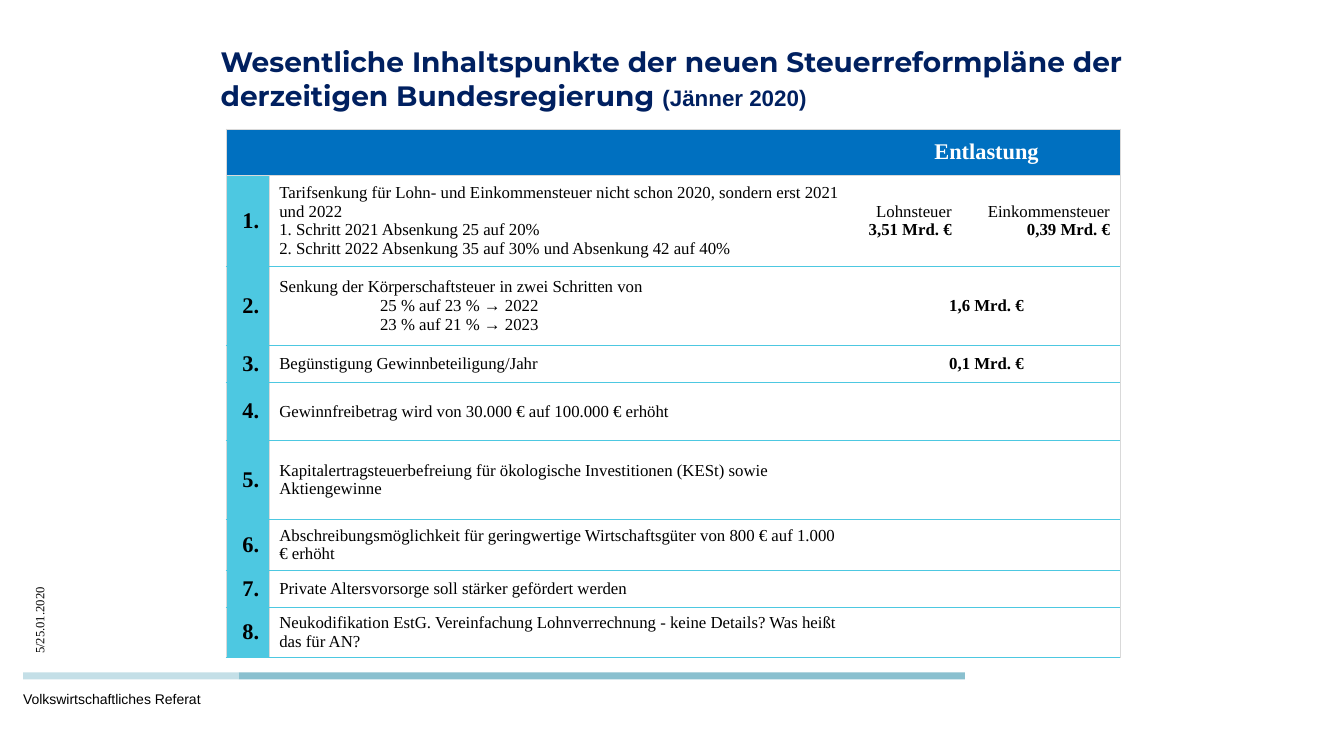
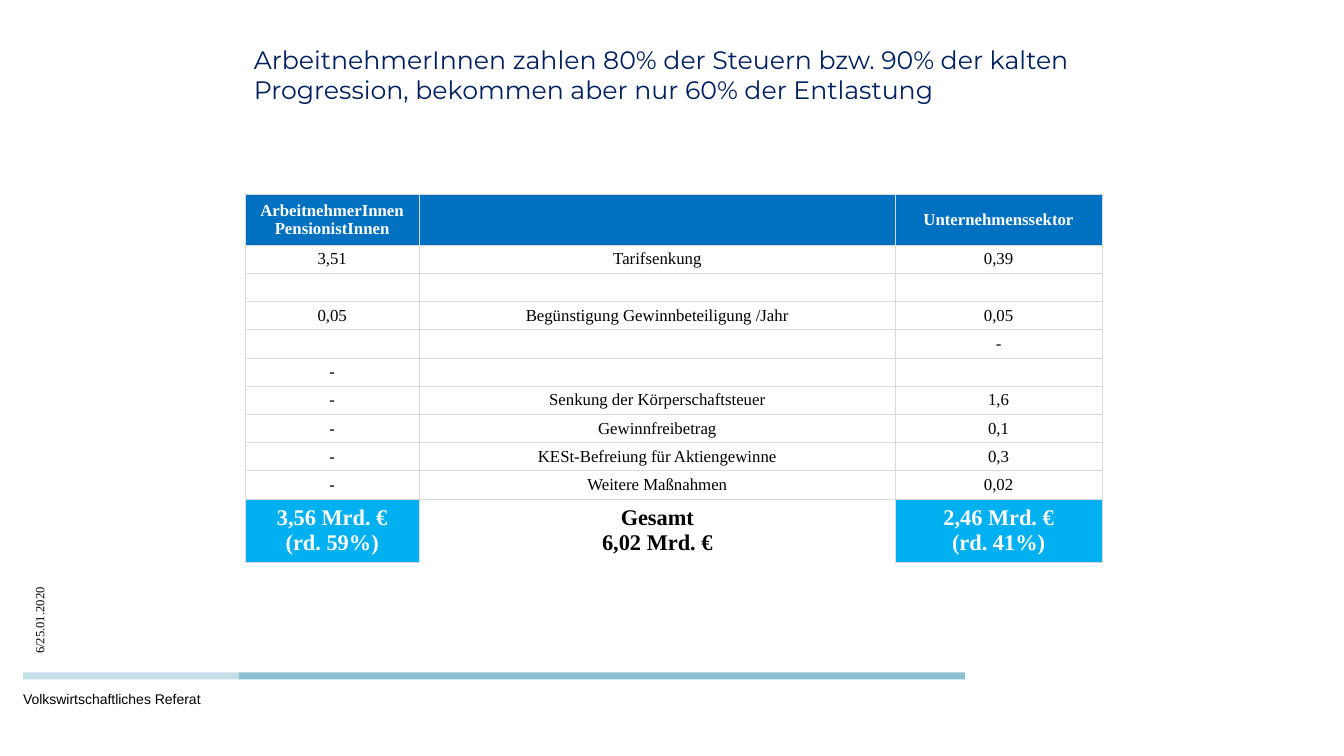
"""Builds two slides on the tax reform plans: contents and relief by group."""
from lxml import etree
from pptx import Presentation, util as u
from pptx.dml.color import RGBColor
from pptx.enum import shapes, text
from pptx.oxml import ns

NAVY, BLUE, TEAL, SKY = "002060", "0070C0", "4DC8E1", "00B0F0"
GREY, BAR, PALE, BLACK, WHITE = "D9D9D9", "8AC0CF", "C4DFE7", "000000", "FFFFFF"
SERIF = "Times New Roman"
LEFT, MID, RIGHT = text.PP_ALIGN.LEFT, text.PP_ALIGN.CENTER, text.PP_ALIGN.RIGHT


def style(size, color=BLACK, bold=False, name=SERIF):
    return dict(size=u.Pt(size), bold=bold, name=name), color


BODY, BOLD, NUM = style(12), style(12, bold=True), style(16, bold=True)
HEAD, CAP, SUM = style(16, WHITE, True), style(12, WHITE, True), style(16, WHITE, True)
FOOT, DATE = style(10, name="Arial"), style(9)
TITLE = style(20, NAVY, True, "Montserrat")
NOTE = style(16, NAVY, True, "Arial")
PLAIN = style(18, NAVY, False, "Montserrat")

PLANS = [
    (0.83, ["Tarifsenkung für Lohn- und Einkommensteuer nicht schon 2020, sondern erst 2021 und 2022",
            "1. Schritt 2021 Absenkung 25 auf 20%",
            "2. Schritt 2022 Absenkung 35 auf 30% und Absenkung 42 auf 40%"], 0,
     [["Lohnsteuer", "3,51 Mrd. €"], ["Einkommensteuer", "0,39 Mrd. €"]]),
    (0.79, ["Senkung der Körperschaftsteuer in zwei Schritten von",
            "25 % auf 23 % → 2022", "23 % auf 21 % → 2023"], 1, [["1,6 Mrd. €"]]),
    (0.35, ["Begünstigung Gewinnbeteiligung/Jahr"], 0, [["0,1 Mrd. €"]]),
    (0.57, ["Gewinnfreibetrag wird von 30.000 € auf 100.000 € erhöht"], 0, [[]]),
    (0.79, ["Kapitalertragsteuerbefreiung für ökologische Investitionen (KESt) sowie Aktiengewinne"], 0, [[]]),
    (0.46, ["Abschreibungsmöglichkeit für geringwertige Wirtschaftsgüter von 800 € auf 1.000 € erhöht"], 0, [[]]),
    (0.35, ["Private Altersvorsorge soll stärker gefördert werden"], 0, [[]]),
    (0.46, ["Neukodifikation EstG. Vereinfachung Lohnverrechnung - keine Details? Was heißt das für AN?"], 0, [[]]),
]
SHARES = [
    (["ArbeitnehmerInnen", "PensionistInnen"], [], ["Unternehmenssektor"]),
    (["3,51"], ["Tarifsenkung"], ["0,39"]),
    ([], [], []),
    (["0,05"], ["Begünstigung Gewinnbeteiligung /Jahr"], ["0,05"]),
    ([], [], ["-"]),
    (["-"], [], []),
    (["-"], ["Senkung der Körperschaftsteuer"], ["1,6"]),
    (["-"], ["Gewinnfreibetrag"], ["0,1"]),
    (["-"], ["KESt-Befreiung für Aktiengewinne"], ["0,3"]),
    (["-"], ["Weitere Maßnahmen"], ["0,02"]),
    (["3,56 Mrd. €", "(rd. 59%)"], ["Gesamt", "6,02 Mrd. €"], ["2,46 Mrd. €", "(rd. 41%)"]),
]


def rgb(code):
    return RGBColor.from_string(code)


def write(frame, paras, align=LEFT, indent=0):
    for i, runs in enumerate(paras):
        para = frame.paragraphs[0] if i == 0 else frame.add_paragraph()
        para.alignment = align
        if i and indent:
            para._p.get_or_add_pPr().set("marL", str(u.Inches(indent)))
        for words, (form, color) in runs:
            run = para.add_run()
            run.text = words
            for key, val in form.items():
                setattr(run.font, key, val)
            run.font.color.rgb = rgb(color)


def label(slide, box, runs, anchor=text.MSO_ANCHOR.TOP, turn=0):
    shape = slide.shapes.add_textbox(*map(u.Inches, box))
    shape.rotation = turn
    shape.text_frame.word_wrap = True
    shape.text_frame.vertical_anchor = anchor
    write(shape.text_frame, [runs])


def frame(deck, page, box, title):
    slide = deck.slides.add_slide(deck.slide_layouts[6])
    label(slide, (0.13, 6.8, 3.78, 0.26), [("Volkswirtschaftliches Referat", FOOT)])
    label(slide, (-0.28, 5.79, 1.34, 0.25), [(f"{page}/25.01.2020", DATE)], turn=270)
    for left, width, color in ((2.37, 7.2, BAR), (0.23, 2.14, PALE)):
        bar = slide.shapes.add_shape(shapes.MSO_SHAPE.RECTANGLE,
                                     *map(u.Inches, (left, 6.67, width, 0.07)))
        bar.shadow.inherit = False
        bar.fill.solid()
        bar.fill.fore_color.rgb = rgb(color)
        bar.line.fill.background()
    label(slide, box, title, text.MSO_ANCHOR.MIDDLE)
    return slide


def grid(slide, left, top, cols, rows):
    box = map(u.Inches, (left, top, sum(cols), sum(rows)))
    table = slide.shapes.add_table(len(rows), len(cols), *box).table
    table.first_row = table.horz_banding = False
    for parts, sizes, key in ((table.columns, cols, "width"), (table.rows, rows, "height")):
        for part, size in zip(parts, sizes):
            setattr(part, key, u.Inches(size))
    return table


def paint(cell, fill, edges):
    """Sets the fill and the left, right, top and bottom edge of a cell."""
    cell.vertical_anchor = text.MSO_ANCHOR.MIDDLE
    if fill:
        cell.fill.solid()
        cell.fill.fore_color.rgb = rgb(fill)
    else:
        cell.fill.background()
    props = cell._tc.get_or_add_tcPr()
    for i, (side, color) in enumerate(zip("LRTB", edges)):
        line = etree.Element(ns.qn(f"a:ln{side}"), w=str(u.Pt(0.5)))
        kind = "a:solidFill" if color else "a:noFill"
        ink = etree.SubElement(line, ns.qn(kind))
        if color:
            etree.SubElement(ink, ns.qn("a:srgbClr"), val=color)
        props.insert(i, line)
    for para in cell.text_frame.paragraphs:
        if not para.runs:
            etree.SubElement(para._p, ns.qn("a:endParaRPr"), sz="1200")


def plans(deck):
    title = [("Wesentliche Inhaltspunkte der neuen Steuerreformpläne der derzeitigen Bundesregierung ", TITLE),
             ("(Jänner 2020)", NOTE)]
    slide = frame(deck, 5, (2.09, 0.33, 9.43, 0.9), title)
    table = grid(slide, 2.24, 1.28, (0.43, 5.79, 1.08, 1.57), [0.46] + [p[0] for p in PLANS])
    table.cell(0, 2).merge(table.cell(0, 3))
    write(table.cell(0, 2).text_frame, [[("Entlastung", HEAD)]], MID)
    for r, (_, lines, indent, sums) in enumerate(PLANS, 1):
        write(table.cell(r, 0).text_frame, [[(f"{r}.", NUM)]], RIGHT)
        write(table.cell(r, 1).text_frame, [[(s, BODY)] for s in lines], LEFT, indent)
        if len(sums) == 1:
            table.cell(r, 2).merge(table.cell(r, 3))
        for c, item in enumerate(sums, 2):
            paras = [[(s, BOLD if s == item[-1] else BODY)] for s in item]
            write(table.cell(r, c).text_frame, paras, MID if len(sums) == 1 else RIGHT)
    for r in range(len(PLANS) + 1):
        for c in range(4):
            cell = table.cell(r, c)
            fill = BLUE if r == 0 else TEAL if c == 0 else None
            paint(cell, fill, (GREY if c == 0 or c == 1 and r else None,
                               GREY if c == 3 or cell.is_merge_origin or c == 0 and r else None,
                               GREY if r < 2 else TEAL, TEAL if r else GREY))


def shares(deck):
    title = [("ArbeitnehmerInnen zahlen 80% der Steuern bzw. 90% der kalten Progression, "
              "bekommen aber nur 60% der Entlastung", PLAIN)]
    slide = frame(deck, 6, (2.42, 0.33, 8.5, 0.82), title)
    last = len(SHARES) - 1
    table = grid(slide, 2.43, 1.93, (1.73, 4.72, 2.05), [0.48] + [0.26] * (last - 1) + [0.59])
    for r, row in enumerate(SHARES):
        for c, lines in enumerate(row):
            cell = table.cell(r, c)
            total = r == last and c == 1
            look = CAP if r == 0 else BODY if r < last else NUM if total else SUM
            write(cell.text_frame, [[(s, look)] for s in lines], MID)
            if 0 < r < last:
                cell.margin_top = cell.margin_bottom = u.Inches(0.04)
            fill = BLUE if r == 0 else SKY if r == last and not total else None
            paint(cell, fill, (GREY, GREY, GREY, None if total else GREY))


def main():
    deck = Presentation()
    deck.slide_width, deck.slide_height = u.Inches(13.33), u.Inches(7.5)
    plans(deck)
    shares(deck)
    deck.save("out.pptx")


if __name__ == "__main__":
    main()
